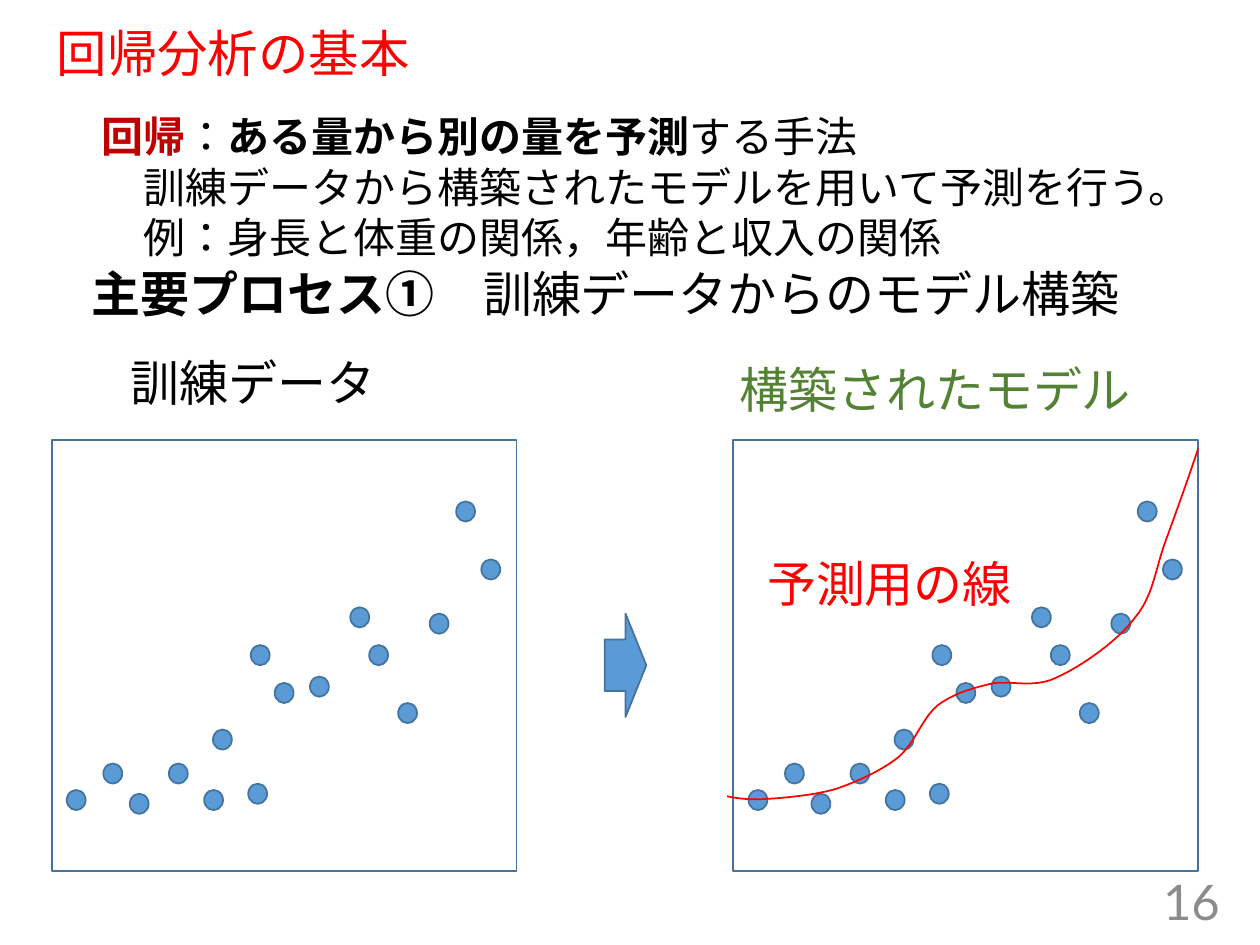
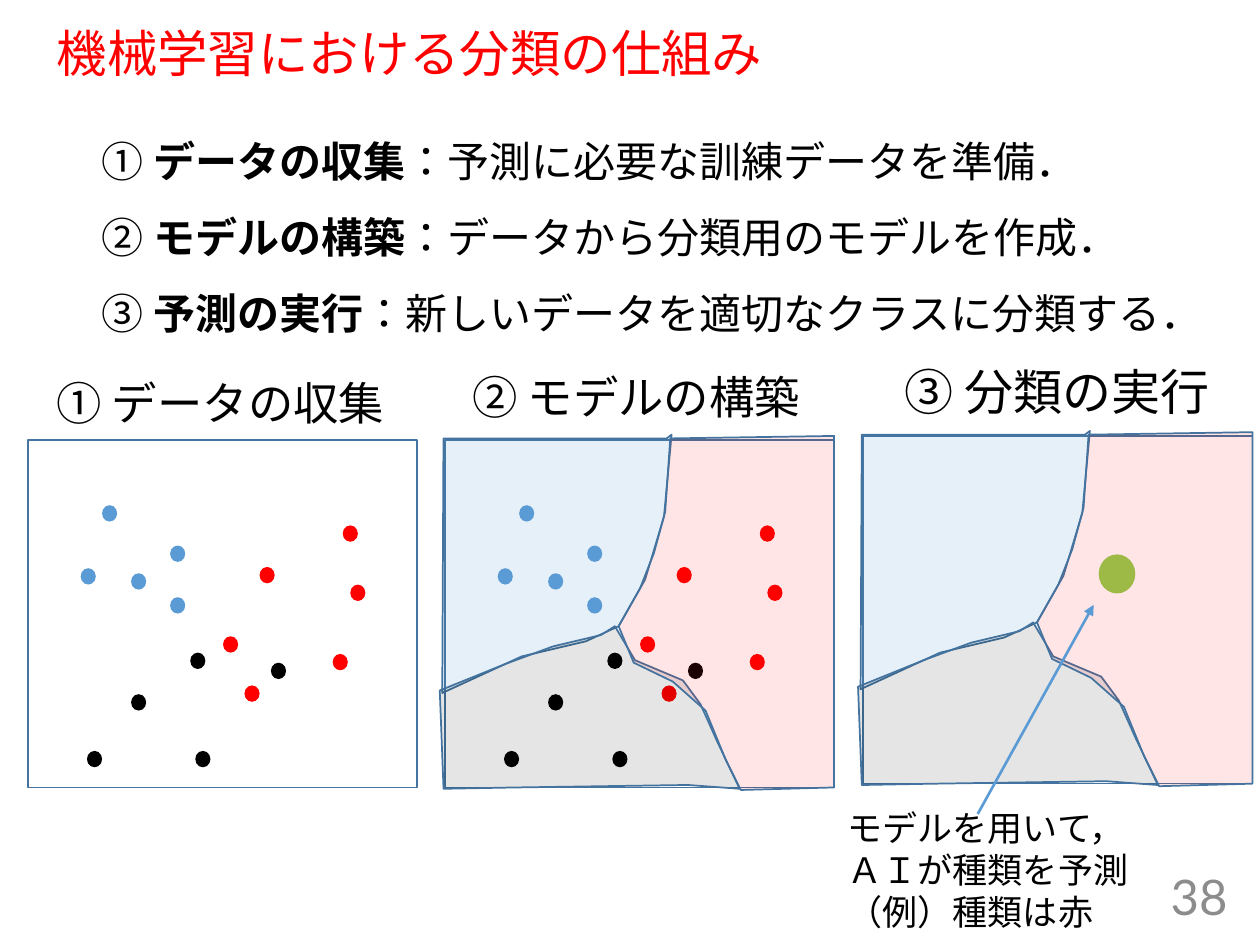
"""Build two lecture slides on regression and classification."""
from lxml import etree
from pptx import Presentation
from pptx import util as u
from pptx.dml.color import RGBColor
from pptx.enum import lang, shapes, text
from pptx.oxml.ns import qn

CELL = u.Inches(0.1)
COLUMNS, ROWS = 100, 75
LATO, CALIBRI, NOTO = "Lato", "Calibri", "Noto Sans CJK JP"
COLORS = {
    "black": "000000", "red": "FF0000", "dark_red": "C00000",
    "green": "548235", "lime": "92D050", "gray": "8C8C8C",
    "blue": "5B9BD5", "outline": "43739E",
}
BOLD = {"bold": True}

TRAINING_DOTS = [
    (32.1, 4.9), (34.1, 9.5), (30, 13.8), (25.2, 16.3), (20.5, 18.8), (23.7, 13.3),
    (27.5, 20.9), (15.8, 16.3), (17.7, 19.3), (15.6, 27.3), (12.8, 23), (12.1, 27.8),
    (9.3, 25.7), (6.2, 28.1), (4.1, 25.7), (1.2, 27.8),
]
PREDICTION_CURVE = [
    (36.9, 0.7), (36.1, 3.1), (35.2, 5.6), (34.4, 7.8), (33.5, 10.1), (33.4, 12.3),
    (31.9, 14.1), (30.5, 16), (27.6, 18), (25.6, 18.9), (23.7, 19.8), (21.8, 19),
    (20.3, 19.4), (18.7, 19.8), (17.4, 20.2), (16.2, 21.1), (15, 22.1), (14.4, 24.1),
    (13.1, 25.2), (11.7, 26.3), (9.9, 27.1), (8.2, 27.7), (6.5, 28.2), (4.3, 28.4),
    (2.8, 28.5), (1.4, 28.6), (0.5, 28.5), (-0.5, 28.3),
]
CLASS_DOTS = {
    "blue": [(5.9, 5.2), (4.2, 10.2), (11.3, 8.4), (11.3, 12.5), (8.2, 10.6)],
    "black": [(8.2, 20.2), (4.7, 24.7), (13.3, 24.7), (19.3, 17.7), (12.9, 16.9)],
    "red": [(17.2, 19.5), (15.5, 15.6), (18.4, 10.1), (24.2, 17), (25.6, 11.5), (25, 6.8)],
}
CLASS_REGIONS = [
    ("blue", 15, [(-0.2, 20.1), (6.1, 17.2), (11.2, 16), (13.8, 14.8), (15.9, 11.1),
                  (17.4, 6.1), (18, -0.4), (17.6, -0.1), (-0.1, -0.1)]),
    ("black", 10, [(-0.4, 19.9), (4.8, 17.8), (8.6, 16.4), (12.4, 15.5), (13.5, 14.8),
                   (15.1, 17.5), (18.9, 19.1), (20.3, 21), (21.6, 23.9), (23.4, 27.7),
                   (19.3, 27.4), (5.4, 27.6), (-0.1, 27.7)]),
    ("red", 10, [(17.9, -0.1), (17.5, 5.7), (16.6, 9), (15.5, 11.8), (13.8, 14.8),
                 (15, 17.7), (18.1, 19.2), (20.7, 21.5), (22.3, 25.4), (23.5, 27.8),
                 (30.9, 27.6), (30.9, -0.3)]),
]


def cells(*values):
    """Turn grid cells into lengths."""
    return [round(value * CELL) for value in values]


def color(name):
    """Look up a named colour."""
    return RGBColor.from_string(COLORS[name])


def style_font(font, size, name, tone, bold=False):
    """Format one font."""
    font.size, font.name, font.bold = u.Pt(size), name, bold
    font.color.rgb = color(tone)
    font.language_id = lang.MSO_LANGUAGE_ID.JAPANESE


def write(frame, paragraphs, size, name=LATO, tone="black", before=0, spacing=None,
          align=text.PP_ALIGN.LEFT):
    """Fill a text frame; each paragraph is a string or a list of (text, changes)."""
    frame.word_wrap = True
    frame.auto_size = text.MSO_AUTO_SIZE.NONE
    base = {"size": size, "name": name, "tone": tone}
    for index, spans in enumerate(paragraphs):
        para = frame.add_paragraph() if index else frame.paragraphs[0]
        para.alignment, para.space_before, para.line_spacing = align, u.Pt(before), spacing
        style_font(para.font, **base)
        for words, changes in [(spans, {})] if isinstance(spans, str) else spans:
            span = para.add_run()
            span.text = words
            style_font(span.font, **{**base, **changes})


def add_text(page, area, paragraphs, size, anchor=text.MSO_ANCHOR.TOP, **style):
    """Add a text box on the grid."""
    box = page.shapes.add_textbox(*cells(*area))
    box.text_frame.vertical_anchor = anchor
    write(box.text_frame, paragraphs, size, **style)


def add_page(deck, title, number, number_at):
    """Add a titled slide with its page number."""
    page = deck.slides.add_slide(deck.slide_layouts[5])
    heading = page.shapes.title
    heading.left, heading.top, heading.width, heading.height = cells(3.5, 1.9, 92.5, 5.1)
    heading.text_frame.vertical_anchor = text.MSO_ANCHOR.MIDDLE
    write(heading.text_frame, [title], 28.8, tone="red", spacing=0.9)
    add_text(page, (*number_at, 22.5, 4), [number], 28, text.MSO_ANCHOR.MIDDLE,
             tone="gray", align=text.PP_ALIGN.RIGHT)
    return page


def paint(shape, fill=None, line="outline", opacity=100):
    """Set fill, outline and opacity of a shape."""
    shape.shadow.inherit = False
    if fill:
        shape.fill.solid()
        shape.fill.fore_color.rgb = color(fill)
        if opacity < 100:
            tint = shape._element.spPr.find(qn("a:solidFill"))[0]
            etree.SubElement(tint, qn("a:alpha")).set("val", str(opacity * 1000))
    else:
        shape.fill.background()
    if line:
        shape.line.color.rgb = color(line)
        shape.line.width = u.Pt(1)
    else:
        shape.line.fill.background()


def add_preset(page, kind, area, **look):
    """Add a painted preset shape on the grid."""
    paint(page.shapes.add_shape(kind, *cells(*area)), **look)


def add_panel(page, origin, size):
    """Add the empty frame of a plot."""
    add_preset(page, shapes.MSO_SHAPE.RECTANGLE, (*origin, *size))


def add_dots(page, origin, dots, size, **look):
    """Scatter dots relative to a panel's corner."""
    for column, row in dots:
        area = (origin[0] + column, origin[1] + row, *size)
        add_preset(page, shapes.MSO_SHAPE.OVAL, area, **look)


def add_outline(page, origin, points, close=True, **look):
    """Draw a freeform relative to a panel's corner."""
    start, *rest = [cells(origin[0] + x, origin[1] + y) for x, y in points]
    builder = page.shapes.build_freeform(*start)
    builder.add_line_segments(rest, close=close)
    paint(builder.convert_to_shape(), **look)


def add_regions(page, origin):
    """Tint the three class regions of a panel."""
    for fill, opacity, points in CLASS_REGIONS:
        add_outline(page, origin, points, fill=fill, opacity=opacity)


def add_arrow(page, start, end):
    """Add a straight arrow on the grid."""
    arrow = page.shapes.add_connector(shapes.MSO_CONNECTOR.STRAIGHT, *cells(*start, *end))
    arrow.line.color.rgb = color("blue")
    arrow.line.width = u.Pt(1.5)
    etree.SubElement(arrow.line._get_or_add_ln(), qn("a:tailEnd")).set("type", "triangle")
    etree.SubElement(arrow._element.spPr, qn("a:effectLst"))


def smooth_points(controls, steps=12):
    """Sample a chain of cubic curves."""
    points = [controls[0]]
    for first in range(0, len(controls) - 1, 3):
        for step in range(1, steps + 1):
            t = step / steps
            weights = ((1 - t) ** 3, 3 * t * (1 - t) ** 2, 3 * t * t * (1 - t), t ** 3)
            quad = controls[first:first + 4]
            points.append(tuple(sum(w * point[axis] for w, point in zip(weights, quad))
                                for axis in (0, 1)))
    return points


def build_regression(deck):
    """Build the slide on regression."""
    page = add_page(deck, "回帰分析の基本", "16", (75.3, 69.5))
    add_text(page, (7.1, 8.3, 89, 13.1), [
        [("回帰", {"bold": True, "name": CALIBRI, "tone": "dark_red"}),
         ("：", {"name": CALIBRI}), ("ある量から別の量を予測", BOLD), ("する手法", {})],
        "　訓練データから構築されたモデルを用いて予測を行う。",
        "　例：身長と体重の関係，年齢と収入の関係",
    ], 24, name=NOTO)
    add_text(page, (6.3, 20.4, 89, 5.7), [
        [("主要プロセス①　", {"bold": True, "name": CALIBRI}),
         ("訓練データからのモデル構築", {})]], 28, name=NOTO)
    add_text(page, (9.4, 27.5, 30, 8.1), ["訓練データ"], 28, before=10)
    add_text(page, (57.7, 28, 36.9, 8.1), ["構築されたモデル"], 28, tone="green", before=10)
    data_panel, model_panel = (4.1, 34.9), (58.2, 34.9)
    for origin in (data_panel, model_panel):
        add_panel(page, origin, (36.9, 34.2))
        add_dots(page, origin, TRAINING_DOTS, (1.5, 1.6), fill="blue")
    add_preset(page, shapes.MSO_SHAPE.RIGHT_ARROW, (48, 48.7, 3.3, 8.2), fill="blue")
    add_outline(page, model_panel, smooth_points(PREDICTION_CURVE), close=False, line="red")
    add_text(page, (59.9, 43.4, 30, 8.1), ["予測用の線"], 28, tone="red", before=10)


def build_classification(deck):
    """Build the slide on classification."""
    page = add_page(deck, "機械学習における分類の仕組み", "38", (75.9, 69.1))
    steps = [
        ("① ", "データの収集", "：予測に必要な訓練データを準備．"),
        ("② ", "モデルの構築", "：データから分類用のモデルを作成．"),
        ("③ ", "予測の実行", "：新しいデータを適切なクラスに分類する．"),
    ]
    add_text(page, (7.1, 8.3, 89, 18.7),
             [[(mark, {}), (name, BOLD), (detail, {})] for mark, name, detail in steps],
             24, name=NOTO, spacing=1.5)
    captions = [
        ((3.5, 29.3), "① データの収集", 25.9),
        ((36.5, 28.8), "② モデルの構築", 25.9),
        ((70.8, 28.2), "③ 分類の実行", 28),
    ]
    for corner, caption, size in captions:
        add_text(page, (*corner, 29.2, 8.1), [caption], size, before=10)
    data_panel, model_panel, result_panel = (2.2, 34.9), (35.3, 34.9), (68.5, 34.6)
    for origin in (data_panel, model_panel, result_panel):
        add_panel(page, origin, (30.9, 27.6))
    for origin in (data_panel, model_panel):
        for fill, dots in CLASS_DOTS.items():
            add_dots(page, origin, dots, (1.2, 1.3), fill=fill, line=None)
    add_dots(page, result_panel, [(18.7, 9.4)], (2.9, 3.1), fill="lime", line=None)
    for origin in (model_panel, result_panel):
        add_regions(page, origin)
    add_arrow(page, (77.6, 64.6), (86.8, 48))
    add_text(page, (66.3, 63.5, 33, 11.1),
             ["モデルを用いて，", "ＡＩが種類を予測", "（例）種類は赤"], 20, name=CALIBRI)


def main():
    """Build and save the deck."""
    deck = Presentation()
    deck.slide_width, deck.slide_height = cells(COLUMNS, ROWS)
    build_regression(deck)
    build_classification(deck)
    deck.save("out.pptx")


if __name__ == "__main__":
    main()
